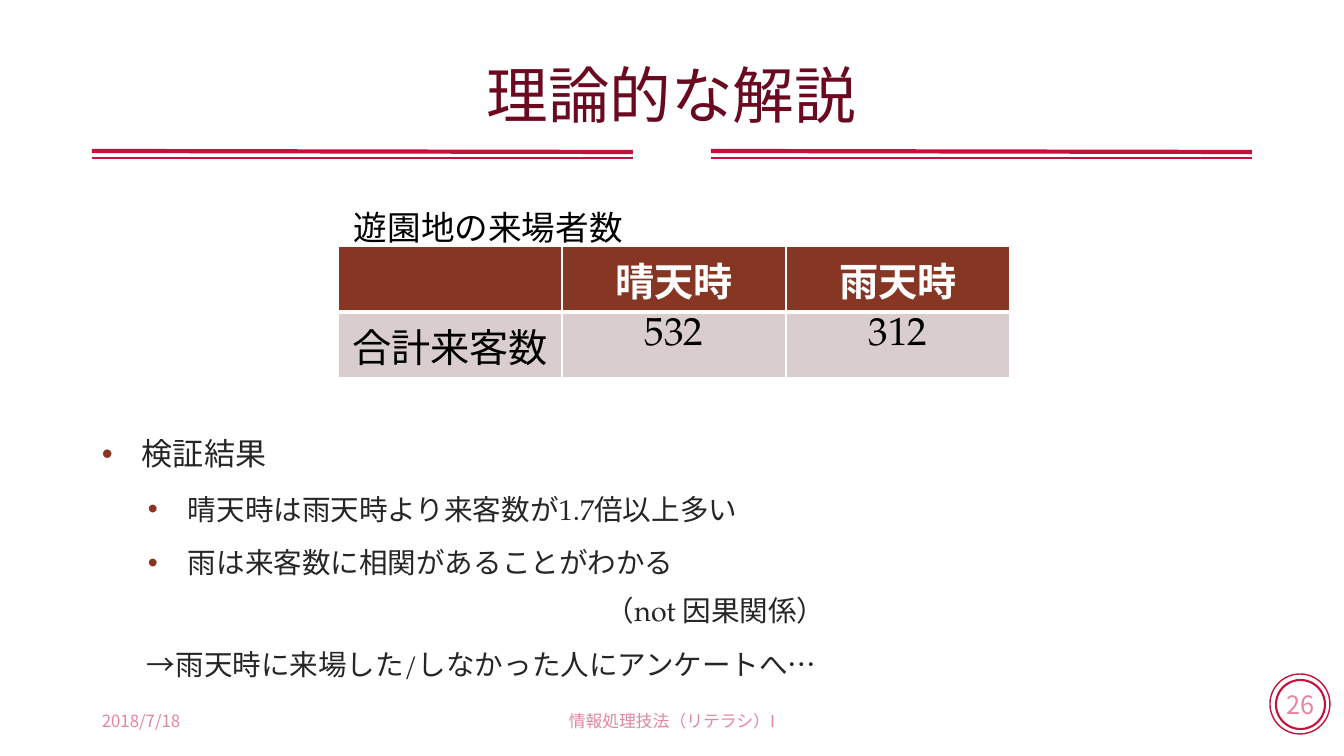
"""Build the slide on visitor counts in fine and rainy weather."""
from lxml.etree import SubElement
from pptx import Presentation
from pptx.dml.color import RGBColor
from pptx.enum.shapes import MSO_CONNECTOR, MSO_SHAPE
from pptx.enum.text import MSO_ANCHOR, PP_ALIGN
from pptx.oxml import parse_xml
from pptx.oxml.ns import nsdecls, qn
from pptx.util import Pt

SCALE = 914400 / 100.8
CRIMSON = RGBColor(0xC8, 0x10, 0x3D)
WINE = RGBColor(0x6B, 0x09, 0x20)
BROWN = RGBColor(0x87, 0x36, 0x24)
PALE = RGBColor(0xD9, 0xCE, 0xCD)
CHARCOAL = RGBColor(0x26, 0x26, 0x26)
BLACK = RGBColor(0, 0, 0)
WHITE = RGBColor(0xFF, 0xFF, 0xFF)
SANS = "Noto Sans CJK JP"
SERIF = "TeX Gyre Pagella"


def px(*lengths):
    return [round(length * SCALE) for length in lengths]


def write(paragraph, text, size, color, name=SANS, bold=False, alpha=None, align=PP_ALIGN.LEFT):
    paragraph.text = text
    paragraph.alignment = align
    for run in paragraph.runs:
        for key, value in {"size": Pt(size), "name": name, "bold": bold}.items():
            setattr(run.font, key, value)
        run.font.color.rgb = color
        properties = run.font._element
        properties.set("lang", "ja-JP")
        SubElement(properties, qn("a:ea"), typeface=SANS)
        if alpha:
            SubElement(properties.find(".//" + qn("a:srgbClr")), qn("a:alpha"), val=str(alpha * 1000))


presentation = Presentation()
presentation.slide_width, presentation.slide_height = px(1344, 756)
slide = presentation.slides.add_slide(presentation.slide_layouts[6])

for left, top, diameter, weight in [(1270, 674, 60, 1), (1276, 680, 49, 1.5)]:
    ring = slide.shapes.add_shape(MSO_SHAPE.OVAL, *px(left, top, diameter, diameter))
    ring.shadow.inherit = False
    ring.fill.background()
    ring.line.color.rgb = CRIMSON
    ring.line.width = Pt(weight)
ring.text_frame.word_wrap = False
ring.text_frame.vertical_anchor = MSO_ANCHOR.MIDDLE
write(ring.text_frame.paragraphs[0], "26", 18, CRIMSON, alpha=50, align=PP_ALIGN.CENTER)

for left in (711, 92):
    for top, bottom, weight in [(151, 152, 3), (158, 158, 1)]:
        rule = slide.shapes.add_connector(MSO_CONNECTOR.STRAIGHT, *px(left, top, left + 541, bottom))
        rule.line.color.rgb = CRIMSON
        rule.line.width = Pt(weight)
        SubElement(rule._element.spPr, qn("a:effectLst"))

CENTER = {"align": PP_ALIGN.CENTER}
FAINT = {"alpha": 50}
labels = [
    ("理論的な解説", (92, 40, 1159, 118), 44, WINE, CENTER),
    ("2018/7/18", (92, 701, 302, 40), 12, CRIMSON, FAINT),
    ("情報処理技法（リテラシ）I", (445, 701, 454, 40), 12, CRIMSON, CENTER | FAINT),
    ("遊園地の来場者数", (344, 202, 291, 50), 24, BLACK, {"name": SERIF}),
]
for text, place, size, color, style in labels:
    frame = slide.shapes.add_textbox(*px(*place)).text_frame
    frame.word_wrap = True
    frame.vertical_anchor = MSO_ANCHOR.MIDDLE
    write(frame.paragraphs[0], text, size, color, **style)
    if size == 44:
        frame.paragraphs[0].line_spacing = 0.9

findings = [
    ("検証結果", 22.2, 40, True),
    ("晴天時は雨天時より来客数が1.7倍以上多い", 20.4, 86, True),
    ("雨は来客数に相関があることがわかる\v\t（not 因果関係）", 20.4, 86, True),
    ("→雨天時に来場した/しなかった人にアンケートへ…", 20.4, 45, False),
]
frame = slide.shapes.add_textbox(*px(92, 415, 1159, 266)).text_frame
frame.word_wrap = True
for index, (text, size, margin, bulleted) in enumerate(findings):
    paragraph = frame.paragraphs[0] if index == 0 else frame.add_paragraph()
    properties = paragraph._p.get_or_add_pPr()
    properties.set("marL", str(px(margin)[0]))
    properties.set("indent", str(px(-40 if bulleted else 0)[0]))
    properties.set("lvl", str(min(index, 1)))
    if bulleted:
        bullet_color = SubElement(properties, qn("a:buClr"))
        SubElement(bullet_color, qn("a:srgbClr"), val=str(BROWN))
        SubElement(properties, qn("a:buFont"), typeface="Arial")
        SubElement(properties, qn("a:buChar"), char="•")
    else:
        SubElement(properties, qn("a:buNone"))
    if "\t" in text:
        tabs = SubElement(properties, qn("a:tabLst"))
        SubElement(tabs, qn("a:tab"), pos=str(px(504)[0]), algn="l")
    paragraph.line_spacing = 1.4
    if index:
        paragraph.space_before = Pt(size * 0.2)
    write(paragraph, text, size, CHARCOAL, SERIF)

visitors = [["", "晴天時", "雨天時"], ["合計来客数", "532", "312"]]
table = slide.shapes.add_table(2, 3, *px(338, 246, 672, 132)).table
for row_index, row in enumerate(visitors):
    header = row_index == 0
    for column_index, text in enumerate(row):
        cell = table.cell(row_index, column_index)
        cell.fill.solid()
        cell.fill.fore_color.rgb = BROWN if header else PALE
        write(cell.text_frame.paragraphs[0], text, 28, WHITE if header else BLACK, SERIF, header, **CENTER)
        widths = {"lnL": 1, "lnR": 1, "lnT": 1 if header else 3, "lnB": 3 if header else 1}
        for position, (side, width) in enumerate(widths.items()):
            border = parse_xml(
                f'<a:{side} {nsdecls("a")} w="{Pt(width)}"><a:solidFill>'
                f'<a:srgbClr val="{WHITE}"/></a:solidFill></a:{side}>'
            )
            cell._tc.get_or_add_tcPr().insert(position, border)

presentation.save("out.pptx")
